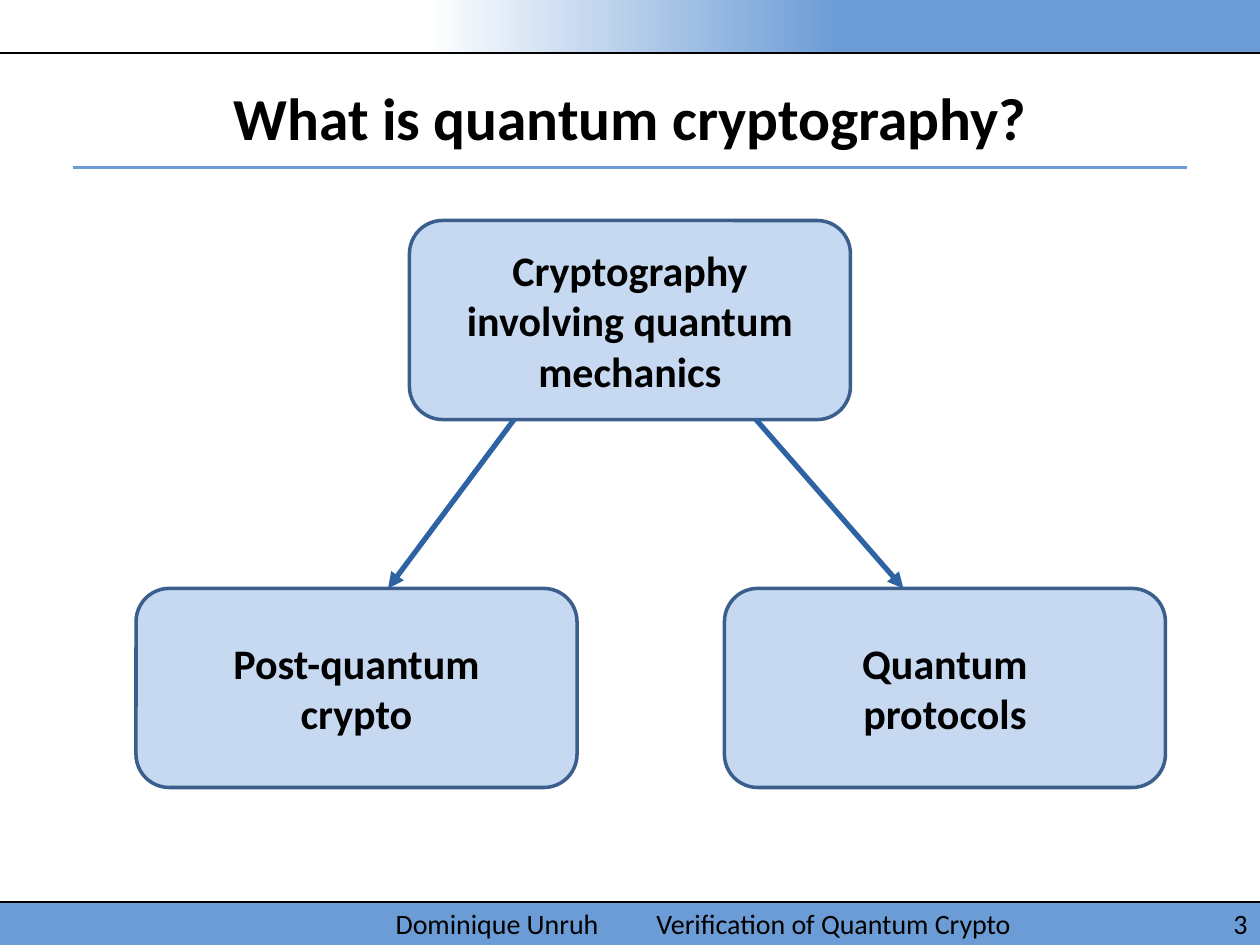
from dataclasses import dataclass

from lxml import etree
from pptx import Presentation
from pptx.dml.color import RGBColor
from pptx.enum import shapes, text
from pptx.oxml import ns
from pptx.util import Inches, Pt


@dataclass(frozen=True)
class Theme:
    """Colours, font and type sizes of the deck."""
    black: str = "000000"
    white: str = "FFFFFF"
    band: str = "6C9CD6"
    node: str = "C6D9F1"
    border: str = "3A5F8C"
    arrow: str = "2D63A2"
    font: str = "Calibri"
    title: int = 34
    body: int = 24
    footer: int = 16


THEME = Theme()
WIDTH, HEIGHT = 10, 7.5
NODE_WIDTH, NODE_HEIGHT = 3.5, 1.58


def colour(value):
    """Turn a hex string into a colour."""
    return RGBColor.from_string(value)


def add_rectangle(page, box, fill, kind=shapes.MSO_SHAPE.RECTANGLE):
    """Place a flat filled shape without an outline."""
    shape = page.shapes.add_shape(kind, *map(Inches, box))
    shape.shadow.inherit = False
    shape.fill.solid()
    shape.fill.fore_color.rgb = colour(fill)
    shape.line.fill.background()
    return shape


def add_line(page, start, end, line_colour, width):
    """Draw a straight line between two points."""
    line = page.shapes.add_connector(
        shapes.MSO_CONNECTOR.STRAIGHT, *map(Inches, (*start, *end)))
    line.line.color.rgb = colour(line_colour)
    line.line.width = Pt(width)
    etree.SubElement(line._element.spPr, ns.qn("a:effectLst"))
    return line


def add_arrow(page, start, end):
    """Draw an arrow with a triangular head at its end."""
    arrow = add_line(page, start, end, THEME.arrow, 3)
    outline = arrow.line._get_or_add_ln()
    etree.SubElement(outline, ns.qn("a:tailEnd"), type="triangle")


def write(shape, words, size, bold=False, align=text.PP_ALIGN.CENTER):
    """Set one vertically centred paragraph in a shape."""
    frame = shape.text_frame
    frame.word_wrap = True
    frame.vertical_anchor = text.MSO_ANCHOR.MIDDLE
    para = frame.paragraphs[0]
    para.text = words
    para.alignment = align
    para.font.name = THEME.font
    para.font.size = Pt(size)
    para.font.bold = bold
    para.font.color.rgb = colour(THEME.black)


def add_header(page, box):
    """Place the fading top band and the rule below it."""
    left, top, width, height = box
    band = add_rectangle(page, (2.73, top, left + width - 2.73, height), THEME.band)
    band.fill.gradient()
    band.fill.gradient_angle = 0
    stops = ((0.09, THEME.white), (0.54, THEME.band))
    for stop, (position, shade) in zip(band.fill.gradient_stops, stops):
        stop.position = position
        stop.color.rgb = colour(shade)
    bottom = top + height
    add_line(page, (left, bottom), (left + width, bottom), THEME.black, 0.75)


def add_title(page, box, words):
    """Place the slide title and its underline."""
    left, top, width, height = box
    title = page.shapes.add_textbox(*map(Inches, box))
    write(title, words, THEME.title, bold=True)
    rule = top + height - 0.02
    add_line(page, (left, rule), (left + width, rule), THEME.band, 2)


def add_footer(page, box, author, talk, number):
    """Place the bottom band with author, talk name and page number."""
    left, top, width, height = box
    add_rectangle(page, box, THEME.band)
    add_line(page, (left, top), (left + width, top), THEME.black, 0.75)
    label = page.shapes.add_textbox(*map(Inches, (2.42, top, 6.33, height)))
    label.text_frame.margin_left = Inches(0.72)
    properties = label.text_frame.paragraphs[0]._p.get_or_add_pPr()
    tabs = etree.SubElement(properties, ns.qn("a:tabLst"))
    etree.SubElement(tabs, ns.qn("a:tab"), pos=str(Inches(2.07)), algn="l")
    write(label, f"{author}\t{talk}", THEME.footer, align=text.PP_ALIGN.LEFT)
    counter = page.shapes.add_textbox(
        *map(Inches, (left + width - 0.67, top, 0.67, height)))
    write(counter, number, THEME.footer, align=text.PP_ALIGN.RIGHT)


def add_node(page, box, words):
    """Place one rounded box of the diagram."""
    node = add_rectangle(page, box, THEME.node, shapes.MSO_SHAPE.ROUNDED_RECTANGLE)
    node.line.color.rgb = colour(THEME.border)
    node.line.width = Pt(2)
    write(node, words, THEME.body, bold=True)


def add_diagram(page, box):
    """Place the root box, its two branches and the arrows to them."""
    left, top, width, height = box
    lower = top + height - NODE_HEIGHT
    nodes = (
        (3.25, top, "Cryptography involving quantum mechanics"),
        (left, lower, "Post-quantum\ncrypto"),
        (left + width - NODE_WIDTH, lower, "Quantum\nprotocols"),
    )
    for x, y, words in nodes:
        add_node(page, (x, y, NODE_WIDTH, NODE_HEIGHT), words)
    for start, end in ((4.08, 3.08), (6, 7.17)):
        add_arrow(page, (start, top + NODE_HEIGHT), (end, lower))


def main():
    """Build and save the deck."""
    deck = Presentation()
    deck.slide_width, deck.slide_height = Inches(WIDTH), Inches(HEIGHT)
    page = deck.slides.add_slide(deck.slide_layouts[6])
    add_header(page, (0, 0, WIDTH, 0.42))
    add_title(page, (0.58, 0.5, 8.84, 0.85), "What is quantum cryptography?")
    add_footer(page, (0, 7.16, WIDTH, 0.34),
               "Dominique Unruh", "Verification of Quantum Crypto", "3")
    add_diagram(page, (1.08, 1.75, 8.17, 4.5))
    deck.save("out.pptx")


if __name__ == "__main__":
    main()
